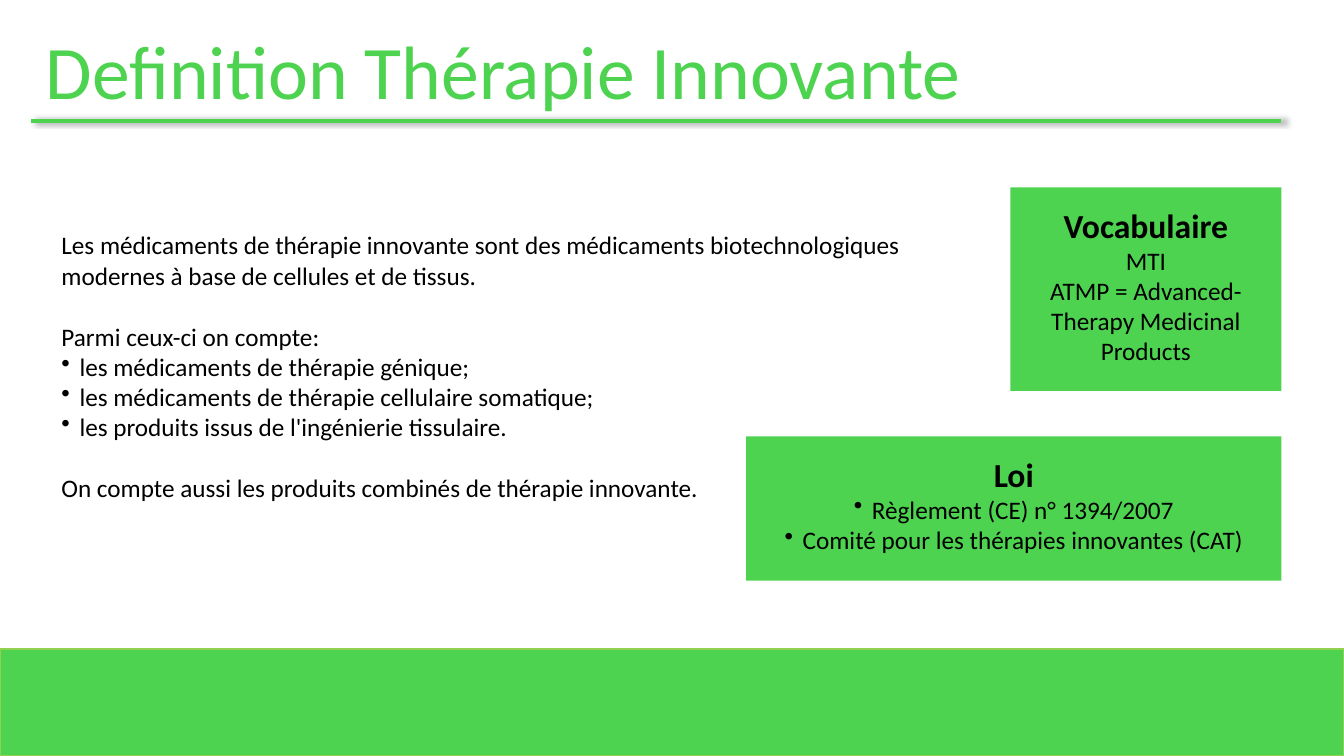
import pptx
import pptx.dml.color
import pptx.enum.shapes
import pptx.enum.text
import pptx.oxml.ns
import pptx.util
from lxml import etree

COLORS = {"green": "4DD350", "edge": "92D050", "text": "000000", "shadow": "000000"}
FONT = "Calibri"
WIDTH, HEIGHT = pptx.util.Inches(13.33), pptx.util.Inches(7.5)

# Positions count in a grid of 100 columns by 100 rows
LEFT, RIGHT = 2.33, 95.35
RULE_ROW = 16
BAND_ROW = 85.87
BULLET_INDENT = pptx.util.Inches(0.18)
CENTER = pptx.enum.text.PP_ALIGN.CENTER


def columns(count):
    return round(WIDTH * count / 100)


def rows(count):
    return round(HEIGHT * count / 100)


def place(left, top, width, height):
    return columns(left), rows(top), columns(width), rows(height)


def color(name):
    return pptx.dml.color.RGBColor.from_string(COLORS[name])


def add_bullet(para):
    properties = para._p.get_or_add_pPr()
    properties.set("marL", str(BULLET_INDENT))
    properties.set("indent", str(-BULLET_INDENT))
    etree.SubElement(properties, pptx.oxml.ns.qn("a:buChar"), char="•")


def add_text(frame, text, size=18, bold=False, ink="text", align=None, before=0, bullet=False):
    """Write one paragraph, using the frame's first one while it is empty."""
    para = frame.paragraphs[0]
    if para.runs:
        para = frame.add_paragraph()
    if align is not None:
        para.alignment = align
    if before:
        para.space_before = pptx.util.Pt(before)
    if bullet:
        add_bullet(para)
    span = para.add_run()
    span.text = text
    span.font.name = FONT
    span.font.size = pptx.util.Pt(size)
    span.font.bold = bold
    span.font.color.rgb = color(ink)


def add_text_box(page, left, top, width, height, wrap=True):
    frame = page.shapes.add_textbox(*place(left, top, width, height)).text_frame
    frame.word_wrap = wrap
    return frame


def add_block(page, left, top, width, height, edge=None):
    box = page.shapes.add_shape(
        pptx.enum.shapes.MSO_SHAPE.RECTANGLE, *place(left, top, width, height))
    box.shadow.inherit = False
    box.fill.solid()
    box.fill.fore_color.rgb = color("green")
    if edge:
        box.line.color.rgb = color(edge)
        box.line.width = pptx.util.Pt(1)
    else:
        box.line.fill.background()
    return box


def add_panel(page, left, top, height, heading, lines, bullet=False):
    """Green panel that ends at the right margin, with a bold heading."""
    frame = add_block(page, left, top, RIGHT - left, height).text_frame
    frame.word_wrap = True
    frame.vertical_anchor = pptx.enum.text.MSO_ANCHOR.TOP
    frame.margin_top = pptx.util.Inches(0.17)
    add_text(frame, heading, size=24, bold=True, align=CENTER)
    for line in lines:
        add_text(frame, line, align=CENTER, bullet=bullet)


def add_rule(page):
    rule = page.shapes.add_connector(
        pptx.enum.shapes.MSO_CONNECTOR.STRAIGHT,
        columns(LEFT), rows(RULE_ROW), columns(RIGHT), rows(RULE_ROW))
    rule.line.color.rgb = color("green")
    rule.line.width = pptx.util.Pt(3)
    # Soft shadow to the right
    qn = pptx.oxml.ns.qn
    effects = etree.SubElement(rule._element.spPr, qn("a:effectLst"))
    shadow = etree.SubElement(
        effects, qn("a:outerShdw"), blurRad=str(pptx.util.Pt(4)),
        dist=str(pptx.util.Pt(3)), dir="0", algn="l", rotWithShape="0")
    tint = etree.SubElement(shadow, qn("a:srgbClr"), val=COLORS["shadow"])
    etree.SubElement(tint, qn("a:alpha"), val="40000")


def add_definition(page):
    frame = add_text_box(page, 3.83, 29.73, 65.04, 37.73)
    add_text(frame, "Les médicaments de thérapie innovante sont des médicaments "
                    "biotechnologiques modernes à base de cellules et de tissus.")
    add_text(frame, "Parmi ceux-ci on compte:", before=22)
    for product in ("les médicaments de thérapie génique;",
                    "les médicaments de thérapie cellulaire somatique;",
                    "les produits issus de l'ingénierie tissulaire."):
        add_text(frame, product, bullet=True)
    add_text(frame, "On compte aussi les produits combinés de thérapie innovante.", before=22)


def main():
    deck = pptx.Presentation()
    deck.slide_width, deck.slide_height = WIDTH, HEIGHT
    page = deck.slides.add_slide(deck.slide_layouts[6])

    # Footer band
    add_block(page, 0, BAND_ROW, 100, 100 - BAND_ROW, edge="edge")

    # Definition
    add_definition(page)

    # Title and its rule
    title = add_text_box(page, LEFT, 2.53, 70.22, 13.47, wrap=False)
    add_text(title, "Definition Thérapie Innovante", size=54, ink="green", align=CENTER)
    add_rule(page)

    # Side panels
    add_panel(page, 75.17, 24.8, 26.93, "Vocabulaire",
              ["MTI", "ATMP = Advanced-Therapy Medicinal Products"])
    add_panel(page, 55.51, 57.73, 19.07, "Loi",
              ["Règlement (CE) n° 1394/2007",
               "Comité pour les thérapies innovantes (CAT)"], bullet=True)

    deck.save("out.pptx")


if __name__ == "__main__":
    main()
